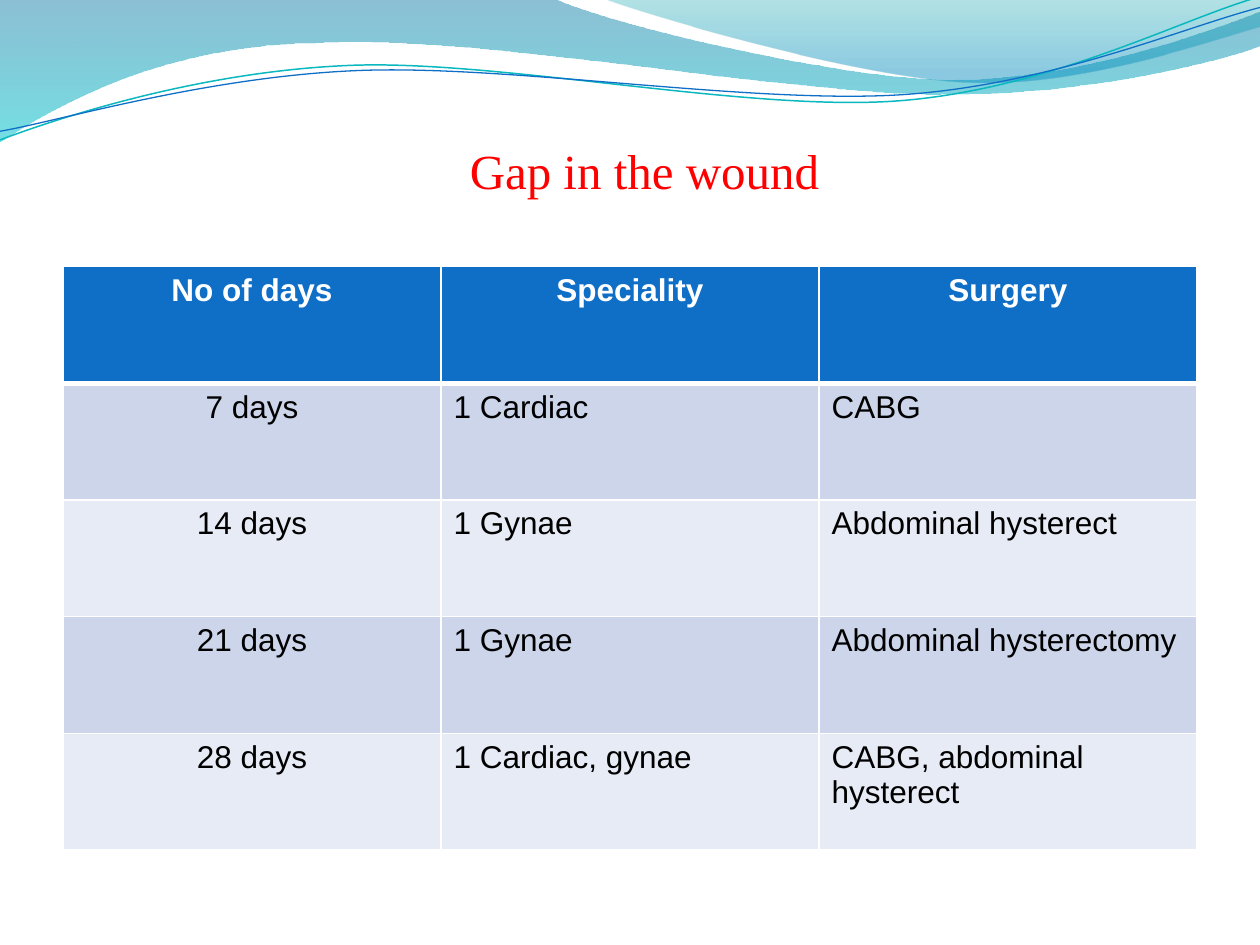
from lxml import etree
from pptx import Presentation
from pptx.dml.color import RGBColor
from pptx.enum import text
from pptx.oxml import ns
from pptx.util import Pt


def rgb(color):
    return RGBColor.from_string(color)


def draw_outline(shapes, start, segments, close):
    """Add a freeform; two numbers make a line segment, six a Bezier curve."""
    points = [(Pt(x), Pt(y)) for seg in segments
              for x, y in zip(seg[::2], seg[1::2])]
    builder = shapes.build_freeform(Pt(start[0]), Pt(start[1]), scale=1.0)
    builder.add_line_segments(points, close=close)
    sp = builder.convert_to_shape()
    sp.shadow.inherit = False
    steps = iter(list(sp._element.iter(ns.qn("a:lnTo"))))
    for seg in segments:
        first = next(steps)
        if len(seg) == 6:
            curve = etree.Element(ns.qn("a:cubicBezTo"))
            first.addprevious(curve)
            for step in (first, next(steps), next(steps)):
                curve.append(step[0])
                step.getparent().remove(step)
    return sp


prs = Presentation()
prs.slide_width, prs.slide_height = Pt(720), Pt(540)
s = prs.slides.add_slide(prs.slide_layouts[5])

# Wave bands: start, segments, gradient stops (position, colour, opacity %)
bands = [
    ((0, -0.7),
     [(316.8, -0.7), (342.7, 12.2, 478.1, 45.4, 545.8, 45.4),
      (614.2, 45.4, 689.8, 18.7, 720, 6.5), (720.7, 25.9),
      (707.8, 31.7, 626.4, 54.7, 537.1, 54), (447.8, 54, 275, 20.2, 185, 24.5),
      (92.9, 25.2, 33.1, 59.8, -0.7, 81.4)],
     [(0, "0074A1", 45), (1, "00C6CF", 55)]),
    ((344.9, -0.7),
     [(366.5, 7.9, 491, 44.6, 553.7, 46.8), (616.3, 49.7, 691.9, 23, 720, 15.1),
      (720, 0)],
     [(0, "00A1A9", 30), (0.8, "008BBF", 45)]),
]
for start, segments, stops in bands:
    sp = draw_outline(s.shapes, start, segments, True)
    sp.line.fill.background()
    sp.fill.gradient()
    sp.fill.gradient_angle = 270
    for stop, (position, color, _) in zip(sp.fill.gradient_stops, stops):
        stop.position = position
        stop.color.rgb = rgb(color)
    colors = sp._element.spPr.iter(ns.qn("a:srgbClr"))
    for clr, (_, _, opacity) in zip(colors, stops):
        etree.SubElement(clr, ns.qn("a:alpha"), val=str(opacity * 1000))

# Wave lines, tilted after drawing: start, curves, colour, width
lines = [
    ((-1.4, 63),
     [(33.8, 51.7, 114.1, 29.4, 199.8, 29.9), (284.9, 30.3, 425.8, 67.3, 512.4, 64.9),
      (599, 62.4, 676.5, 25.7, 720.2, 15.5)], "0AB8BF", 0.85),
    ((-1.1, 58),
     [(32.9, 53.8, 118.3, 32.5, 204.1, 33), (290.6, 33.4, 428.9, 63.1, 515.5, 61.4),
      (601.3, 59.6, 678.4, 30.1, 721.4, 21.3)], "0F6FC6", 0.75),
]
for start, segments, color, width in lines:
    sp = draw_outline(s.shapes, start, segments, False)
    sp.rotation = 357.3
    sp.fill.background()
    sp.line.color.rgb = rgb(color)
    sp.line.width = Pt(width)

# Title, in front of the waves
title = s.shapes.title
s.shapes._spTree.append(title._element)
title.left, title.top, title.width, title.height = Pt(36), Pt(36), Pt(432), Pt(77.8)
tf = title.text_frame
tf.vertical_anchor = text.MSO_ANCHOR.BOTTOM
tf.margin_left = tf.margin_right = tf.margin_bottom = 0
tf.margin_top = Pt(3.6)
p = tf.paragraphs[0]
p.alignment = text.PP_ALIGN.RIGHT
r = p.add_run()
r.text = "Gap in the wound"
r.font.size, r.font.name = Pt(28), "Times New Roman"
r.font.color.rgb = rgb("FF0000")

# Table
rows = [
    ("No of days", "Speciality", "Surgery"),
    ("7 days", "1 Cardiac", "CABG"),
    ("14 days", "1 Gynae", "Abdominal hysterect"),
    ("21 days", "1 Gynae", "Abdominal hysterectomy"),
    ("28 days", "1 Cardiac, gynae", "CABG, abdominal hysterect"),
]
table = s.shapes.add_table(len(rows), 3, Pt(36), Pt(152.4), Pt(648), Pt(333.4)).table
for i, row in enumerate(rows):
    header = i == 0
    fill = "0F6FC6" if header else ("E7EBF5", "CCD5EA")[i % 2]
    widths = {"L": 1, "R": 1, "T": 3 if i == 1 else 1, "B": 3 if header else 1}
    for j, label in enumerate(row):
        cell = table.cell(i, j)
        tcPr = cell._tc.get_or_add_tcPr()
        for side, width in widths.items():
            ln = etree.SubElement(tcPr, ns.qn("a:ln" + side), w=str(Pt(width)))
            solid = etree.SubElement(ln, ns.qn("a:solidFill"))
            etree.SubElement(solid, ns.qn("a:srgbClr"), val="FFFFFF")
        cell.fill.solid()
        cell.fill.fore_color.rgb = rgb(fill)
        p = cell.text_frame.paragraphs[0]
        centred = header or j == 0
        p.alignment = text.PP_ALIGN.CENTER if centred else text.PP_ALIGN.LEFT
        r = p.add_run()
        r.text = label
        r.font.size, r.font.name, r.font.bold = Pt(18), "Arial", header
        r.font.color.rgb = rgb("FFFFFF" if header else "000000")

prs.save("out.pptx")
